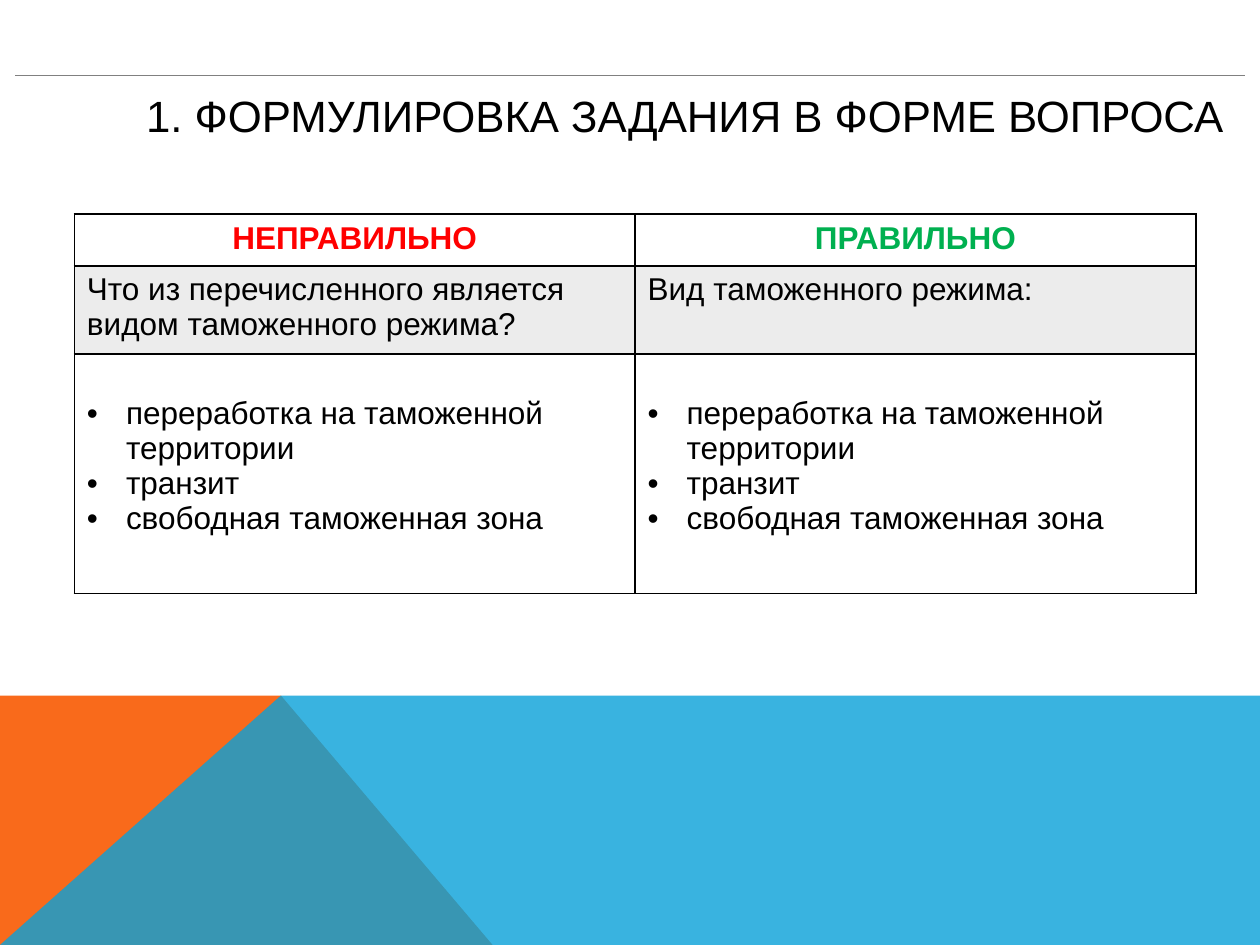
from dataclasses import dataclass

from lxml import etree
from pptx import Presentation
from pptx import util as u
from pptx.dml.color import RGBColor
from pptx.enum import shapes, text
from pptx.oxml import ns

WIDTH, HEIGHT = u.Inches(10), u.Inches(7.5)
FONT = "Arial"
COLORS = {
    "black": "000000", "white": "FFFFFF", "band": "ECECEC", "wrong": "FF0000",
    "right": "00B050", "orange": "F96A1B", "blue": "08A1D9", "rule": "808080",
}
HORIZON, PEAK, FOOT = 0.736, 0.223, 0.391


@dataclass(frozen=True)
class Facet:
    corners: tuple[tuple[float, float], ...]
    color: str
    opacity: int = 100


@dataclass(frozen=True)
class Entry:
    lines: tuple[str, ...]
    color: str = "black"
    bold: bool = False
    align: text.PP_ALIGN = text.PP_ALIGN.LEFT
    bulleted: bool = False


@dataclass(frozen=True)
class Band:
    height: float
    fill: str
    entries: tuple[Entry, Entry]
    top_inset: float = 0.05


def rgb(name: str) -> RGBColor:
    return RGBColor.from_string(COLORS[name])


def apply(target, values: dict) -> None:
    for key, value in values.items():
        setattr(target, key, value)


def style_font(font, size: float, color: str, bold: bool = False) -> None:
    apply(font, {"name": FONT, "size": u.Pt(size), "bold": bold})
    font.color.rgb = rgb(color)


def child(parent, tag: str, **attributes: str):
    return etree.SubElement(parent, ns.qn(tag), attributes)


def draw_facet(slide, facet: Facet) -> None:
    points = [(x * WIDTH, y * HEIGHT) for x, y in facet.corners]
    outline = slide.shapes.build_freeform(*points[0])
    outline.add_line_segments(points[1:], close=True)
    shape = outline.convert_to_shape()
    shape.shadow.inherit = False
    shape.line.fill.background()
    shape.fill.solid()
    shape.fill.fore_color.rgb = rgb(facet.color)
    if facet.opacity < 100:
        hue = shape.fill._xPr.find(".//" + ns.qn("a:srgbClr"))
        child(hue, "a:alpha", val=str(facet.opacity * 1000))


def draw_rule(slide, left: float, right: float, y: float) -> None:
    rule = slide.shapes.add_connector(
        shapes.MSO_CONNECTOR.STRAIGHT,
        *(round(v) for v in (left * WIDTH, y * HEIGHT, right * WIDTH, y * HEIGHT)))
    rule.line.width = u.Pt(0.75)
    rule.line.color.rgb = rgb("rule")
    child(rule._element.spPr, "a:effectLst")


def border_cell(cell) -> None:
    properties = cell._tc.get_or_add_tcPr()
    for side in ("a:lnL", "a:lnR", "a:lnT", "a:lnB"):
        edge = child(properties, side, w=str(u.Pt(1)))
        child(child(edge, "a:solidFill"), "a:srgbClr", val=COLORS["black"])


def fill_cell(cell, entry: Entry, band: Band) -> None:
    border_cell(cell)
    cell.fill.solid()
    cell.fill.fore_color.rgb = rgb(band.fill)
    apply(cell, {
        "margin_left": u.Inches(0.1), "margin_right": u.Inches(0.1),
        "margin_top": u.Inches(band.top_inset), "margin_bottom": u.Inches(0.05),
    })
    cell.text = "\n".join(entry.lines)
    for paragraph in cell.text_frame.paragraphs:
        paragraph.alignment = entry.align
        style_font(paragraph.runs[0].font, 18, entry.color, entry.bold)
        if entry.bulleted:
            properties = paragraph._p.get_or_add_pPr()
            indent = u.Inches(0.31)
            properties.set("marL", str(indent))
            properties.set("indent", str(-indent))
            child(properties, "a:buFont", typeface=FONT)
            child(properties, "a:buChar", char="•")


def draw_comparison(slide, bands: tuple[Band, ...]) -> None:
    total = sum(band.height for band in bands)
    frame = slide.shapes.add_table(
        len(bands), 2, u.Inches(0.59), u.Inches(1.7), u.Inches(8.9), u.Inches(total))
    table = frame.table
    apply(table, {"first_row": False, "horz_banding": False})
    for row, band in enumerate(bands):
        table.rows[row].height = u.Inches(band.height)
        for column, entry in enumerate(band.entries):
            fill_cell(table.cell(row, column), entry, band)


def write_title(slide, wording: str) -> None:
    title = slide.shapes.title
    apply(title, {
        "left": u.Inches(1.06), "top": u.Inches(0.6),
        "width": u.Inches(8.9), "height": u.Inches(0.63),
    })
    title.text = wording
    apply(title.text_frame, {
        "vertical_anchor": text.MSO_ANCHOR.MIDDLE, "word_wrap": True,
        "auto_size": text.MSO_AUTO_SIZE.NONE,
    })
    heading = title.text_frame.paragraphs[0]
    heading.alignment = text.PP_ALIGN.LEFT
    style_font(heading.runs[0].font, 25, "black")


FACETS = (
    Facet(((0, 1), (0, HORIZON), (PEAK, HORIZON), (FOOT, 1)), "orange"),
    Facet(((0, 1), (PEAK, HORIZON), (1, HORIZON), (1, 1)), "blue", 80),
)
REGIMES = Entry(
    ("переработка на таможенной территории", "транзит", "свободная таможенная зона"),
    bulleted=True)
BANDS = (
    Band(0.41, "white", (
        Entry(("НЕПРАВИЛЬНО",), "wrong", True, text.PP_ALIGN.CENTER),
        Entry(("ПРАВИЛЬНО",), "right", True, text.PP_ALIGN.CENTER))),
    Band(0.7, "band", (
        Entry(("Что из перечисленного является видом таможенного режима?",)),
        Entry(("Вид таможенного режима:",)))),
    Band(1.9, "white", (REGIMES, REGIMES), top_inset=0.33),
)


def main() -> None:
    deck = Presentation()
    apply(deck, {"slide_width": WIDTH, "slide_height": HEIGHT})
    slide = deck.slides.add_slide(deck.slide_layouts[5])
    for facet in FACETS:
        draw_facet(slide, facet)
    draw_rule(slide, 0.012, 0.988, 0.08)
    write_title(slide, "1. ФОРМУЛИРОВКА ЗАДАНИЯ В ФОРМЕ ВОПРОСА")
    draw_comparison(slide, BANDS)
    deck.save("out.pptx")


if __name__ == "__main__":
    main()
